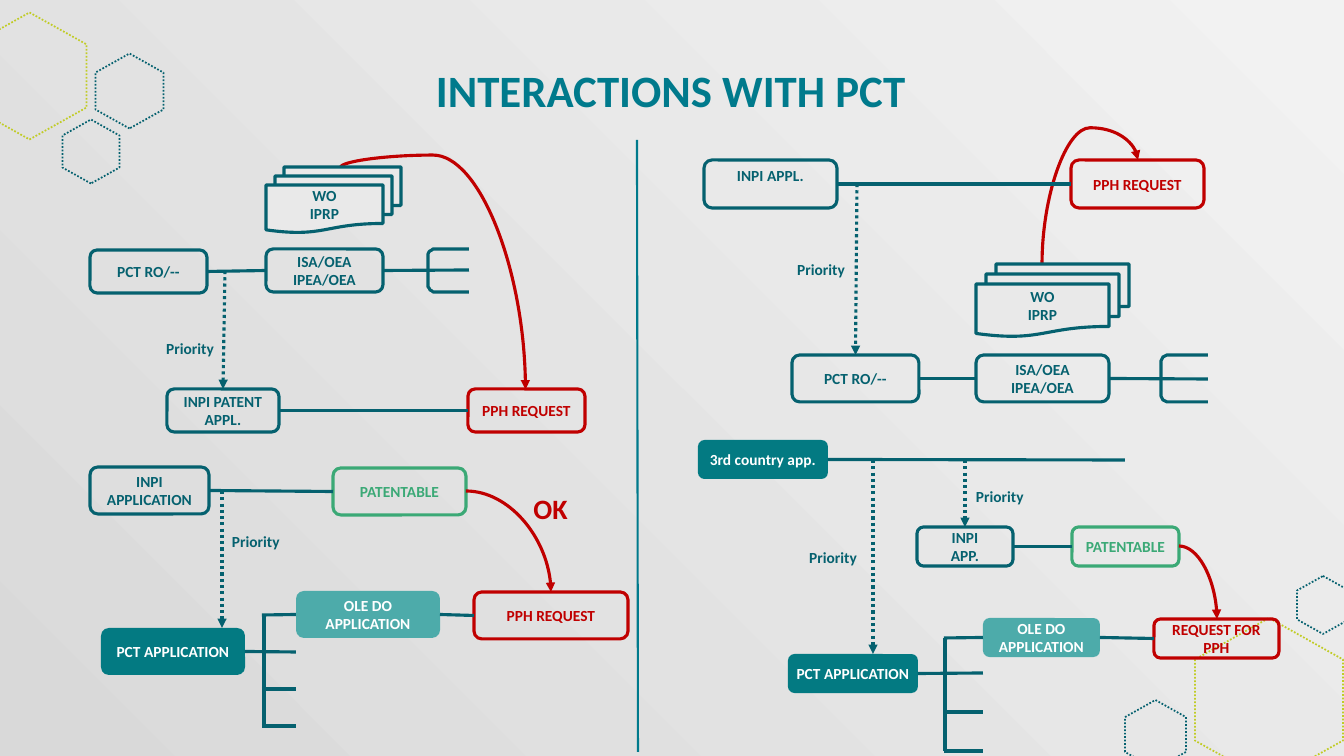
from math import cos, pi, sin

from lxml import etree
from pptx import Presentation
from pptx.dml.color import RGBColor
from pptx.enum.dml import MSO_LINE
from pptx.enum.shapes import MSO_CONNECTOR, MSO_SHAPE
from pptx.enum.text import MSO_ANCHOR, PP_ALIGN
from pptx.oxml.ns import qn
from pptx.util import Pt

PX = 914400 / 100.8
STRAIGHT, CURVE = MSO_CONNECTOR.STRAIGHT, MSO_CONNECTOR.CURVE
ROUNDED, HEXAGON, DOCUMENT = MSO_SHAPE.ROUNDED_RECTANGLE, MSO_SHAPE.HEXAGON, MSO_SHAPE.FLOWCHART_DOCUMENT
DOTTED = MSO_LINE.ROUND_DOT
MIDDLE = MSO_ANCHOR.MIDDLE
LEFT, CENTER, RIGHT = PP_ALIGN.LEFT, PP_ALIGN.CENTER, PP_ALIGN.RIGHT
TOP_SIDE, LEFT_SIDE, RIGHT_SIDE = 0, 1, 3
color = RGBColor.from_string
DARK, TITLE, DEEP, SOFT = "05616F", "007A8C", "037A82", "4DABAA"
RED, GREEN, LIME, WHITE, PAPER = "C00000", "3BA976", "C1CC26", "FFFFFF", "E9E9E9"


def write_text(box, text, ink, size=11, align=CENTER, bottom=4):
    frame = box.text_frame
    frame.text = text
    margins = {"margin_left": 4, "margin_top": 4, "margin_right": 4, "margin_bottom": bottom}
    for name, value in margins.items():
        setattr(frame, name, round(value * PX))
    frame.word_wrap = True
    frame.vertical_anchor = MIDDLE
    for para in frame.paragraphs:
        para.alignment = align
        for name, value in {"name": "Calibri", "size": Pt(size), "bold": True}.items():
            setattr(para.font, name, value)
        para.font.color.rgb = color(ink)


def draw_line(start, end, ink=DARK, width=2.25, kind=STRAIGHT, dotted=False, arrow=False):
    points = [(0, 0) if isinstance(spot[0], str) else spot for spot in (start, end)]
    line = page.shapes.add_connector(kind, *[round(value * PX) for point in points for value in point])
    for spot, join in ((start, line.begin_connect), (end, line.end_connect)):
        if isinstance(spot[0], str):
            join(boxes[spot[0]], spot[1])
    line.line.color.rgb = color(ink)
    line.line.width = Pt(width)
    if dotted:
        line.line.dash_style = DOTTED
    if arrow:
        etree.SubElement(line.line._get_or_add_ln(), qn("a:tailEnd"), type="triangle")
    etree.SubElement(line._element.spPr, qn("a:effectLst"))
    return line


deck = Presentation()
deck.slide_width, deck.slide_height = round(1344 * PX), round(756 * PX)
page = deck.slides.add_slide(deck.slide_layouts[6])

backdrop = page.background.fill
backdrop.gradient()
for stop, shade in zip(backdrop.gradient_stops, ("D9D9D9", "F2F2F2")):
    stop.color.rgb = color(shade)
linear = page._element.find(".//" + qn("a:lin"))
radial = etree.Element(qn("a:path"), path="circle")
etree.SubElement(radial, qn("a:fillToRect"), l="0", t="100000", r="100000", b="0")
linear.getparent().replace(linear, radial)

for x, y, w, h, turn, ink in [
    (-34, 19, 127, 114, 90, LIME), (92, 57, 75, 68, 270, DARK), (59, 123, 64, 57, 270, DARK),
    (1187, 626, 164, 148, 270, LIME), (1121, 704, 69, 61, 270, DARK), (1294, 579, 58, 52, 90, DARK),
]:
    hexagon = page.shapes.add_shape(HEXAGON, *[round(value * PX) for value in (x, y, w, h)])
    hexagon.adjustments[0] = 0.28
    hexagon.rotation = turn
    hexagon.shadow.inherit = False
    hexagon.fill.background()
    hexagon.line.color.rgb = color(ink)
    hexagon.line.width = Pt(1.25)
    hexagon.line.dash_style = DOTTED

draw_line((637, 140), (638, 752), TITLE, 1.5)

boxes = {}
for name, text, x, y, w, h, fill, ink in [
    ("isa left", "ISA/OEA\vIPEA/OEA", 266, 249, 117, 43, None, DARK),
    ("inpi patent", "INPI PATENT APPL.", 167, 389, 112, 43, None, DARK),
    ("pph top left", "PPH REQUEST", 468, 389, 117, 43, None, RED),
    ("pct left", "PCT RO/--", 90, 250, 117, 43, None, DARK),
    ("isa right", "ISA/OEA\vIPEA/OEA", 976, 355, 133, 47, None, DARK),
    ("pct right", "PCT RO/--", 792, 355, 127, 47, None, DARK),
    ("pph top right", "PPH REQUEST", 1071, 160, 133, 48, None, RED),
    ("inpi appl", "INPI APPL.", 704, 160, 133, 48, None, DARK),
    ("ole left", "OLE DO\nAPPLICATION", 296, 591, 144, 47, SOFT, WHITE),
    ("patentable left", "PATENTABLE", 333, 468, 133, 47, None, GREEN),
    ("inpi application", "INPI\nAPPLICATION", 90, 467, 119, 47, None, DARK),
    ("pph bottom left", "PPH REQUEST", 474, 592, 154, 47, None, RED),
    ("application left", "PCT APPLICATION", 101, 628, 144, 47, DEEP, WHITE),
    ("patentable right", "PATENTABLE", 1072, 527, 107, 39, None, GREEN),
    ("third country", "3rd country app.", 698, 440, 130, 39, DEEP, WHITE),
    ("request", "REQUEST FOR PPH", 1154, 619, 125, 39, None, RED),
    ("ole right", "OLE DO\nAPPLICATION", 983, 618, 117, 39, SOFT, WHITE),
    ("inpi app", "INPI\nAPP.", 917, 527, 96, 39, None, DARK),
    ("application right", "PCT APPLICATION", 788, 654, 130, 39, DEEP, WHITE),
]:
    box = boxes[name] = page.shapes.add_shape(ROUNDED, *[round(value * PX) for value in (x, y, w, h)])
    box.shadow.inherit = False
    if fill:
        box.fill.solid()
        box.fill.fore_color.rgb = color(fill)
        box.line.fill.background()
    else:
        box.fill.background()
        box.line.color.rgb = color(ink)
        box.line.width = Pt(2.25)
    write_text(box, text, ink, bottom=22 if name == "inpi appl" else 4)

for start, end, bend, turn, adjust in [
    ((544, 186), (322, 371), "curvedConnector3", 270, -5600),
    ((1142, 260), (1038, 164), "curvedConnector3", 90, 131000),
    ((466, 491), (551, 592), "curvedConnector2", 0, None),
    ((1179, 546), (1217, 619), "curvedConnector2", 0, None),
]:
    properties = draw_line(start, end, RED, kind=CURVE, arrow=True)._element.spPr
    properties.find(qn("a:xfrm")).set("rot", str(turn * 60000))
    geometry = properties.find(qn("a:prstGeom"))
    geometry.set("prst", bend)
    if adjust is not None:
        etree.SubElement(geometry.find(qn("a:avLst")), qn("a:gd"), name="adj1", fmla=f"val {adjust}")

for start, end in [
    (("pct left", RIGHT_SIDE), ("isa left", LEFT_SIDE)),
    (("inpi patent", RIGHT_SIDE), ("pph top left", LEFT_SIDE)),
    (("isa left", RIGHT_SIDE), (469, 270)),
    (("inpi appl", RIGHT_SIDE), ("pph top right", LEFT_SIDE)),
    (("pct right", RIGHT_SIDE), ("isa right", LEFT_SIDE)),
    (("isa right", RIGHT_SIDE), (1208, 379)),
    (("inpi application", RIGHT_SIDE), ("patentable left", LEFT_SIDE)),
    (("ole left", RIGHT_SIDE), ("pph bottom left", LEFT_SIDE)),
    (("application left", RIGHT_SIDE), (296, 652)),
    ((262, 615), ("ole left", LEFT_SIDE)),
    ((262, 689), (296, 689)),
    ((262, 726), (296, 726)),
    ((264, 615), (264, 727)),
    (("third country", RIGHT_SIDE), (1125, 460)),
    (("inpi app", RIGHT_SIDE), ("patentable right", LEFT_SIDE)),
    (("ole right", RIGHT_SIDE), ("request", LEFT_SIDE)),
    (("application right", RIGHT_SIDE), (983, 673)),
    ((944, 638), ("ole right", LEFT_SIDE)),
    ((944, 712), (983, 712)),
    ((944, 751), (983, 751)),
    ((945, 638), (945, 751)),
]:
    draw_line(start, end)

for start, end in [
    ((225, 271), ("inpi patent", TOP_SIDE)),
    ((857, 184), ("pct right", TOP_SIDE)),
    ((222, 491), (222, 628)),
    ((873, 460), (873, 654)),
    ((965, 460), ("inpi app", TOP_SIDE)),
]:
    draw_line(start, end, dotted=True, arrow=True)

for x, y, w, h, step in [(266, 185, 117, 48, 9), (976, 284, 133, 53, 10)]:
    for depth in (2, 1, 0):
        place = (x + depth * step, y - depth * step, w, h)
        sheet = page.shapes.add_shape(DOCUMENT, *[round(value * PX) for value in place])
        sheet.shadow.inherit = False
        sheet.fill.solid()
        sheet.fill.fore_color.rgb = color(PAPER)
        sheet.line.color.rgb = color(DARK)
        sheet.line.width = Pt(2.25)
    write_text(sheet, "WO\nIPRP", DARK)

for left, top, right, bottom, radius in [(428, 249, 469, 292, 7), (1161, 355, 1208, 402, 8)]:
    angles = [step * pi / 12 for step in range(7)]
    lower = [(left + radius - radius * sin(a), bottom - radius + radius * cos(a)) for a in angles]
    upper = [(left + radius - radius * cos(a), top + radius - radius * sin(a)) for a in angles]
    builder = page.shapes.build_freeform(right, bottom, scale=PX)
    builder.add_line_segments(lower + upper + [(right, top)], close=False)
    bracket = builder.convert_to_shape()
    bracket.shadow.inherit = False
    bracket.fill.background()
    bracket.line.color.rgb = color(DARK)
    bracket.line.width = Pt(2.25)

for text, x, y, w, h, ink, size, align in [
    ("Priority", 97, 327, 121, 43, DARK, 11, RIGHT),
    ("Priority", 712, 246, 137, 47, DARK, 11, RIGHT),
    ("Priority", 228, 518, 73, 47, DARK, 11, LEFT),
    ("Priority", 768, 538, 93, 39, DARK, 11, RIGHT),
    ("Priority", 972, 477, 85, 39, DARK, 11, LEFT),
    ("OK", 513, 485, 75, 47, RED, 20, CENTER),
    ("INTERACTIONS WITH PCT", 22, 77, 1298, 45, TITLE, 32, CENTER),
]:
    label = page.shapes.add_textbox(*[round(value * PX) for value in (x, y, w, h)])
    write_text(label, text, ink, size, align)
label.text_frame.paragraphs[0].line_spacing = Pt(25)

deck.save("out.pptx")
